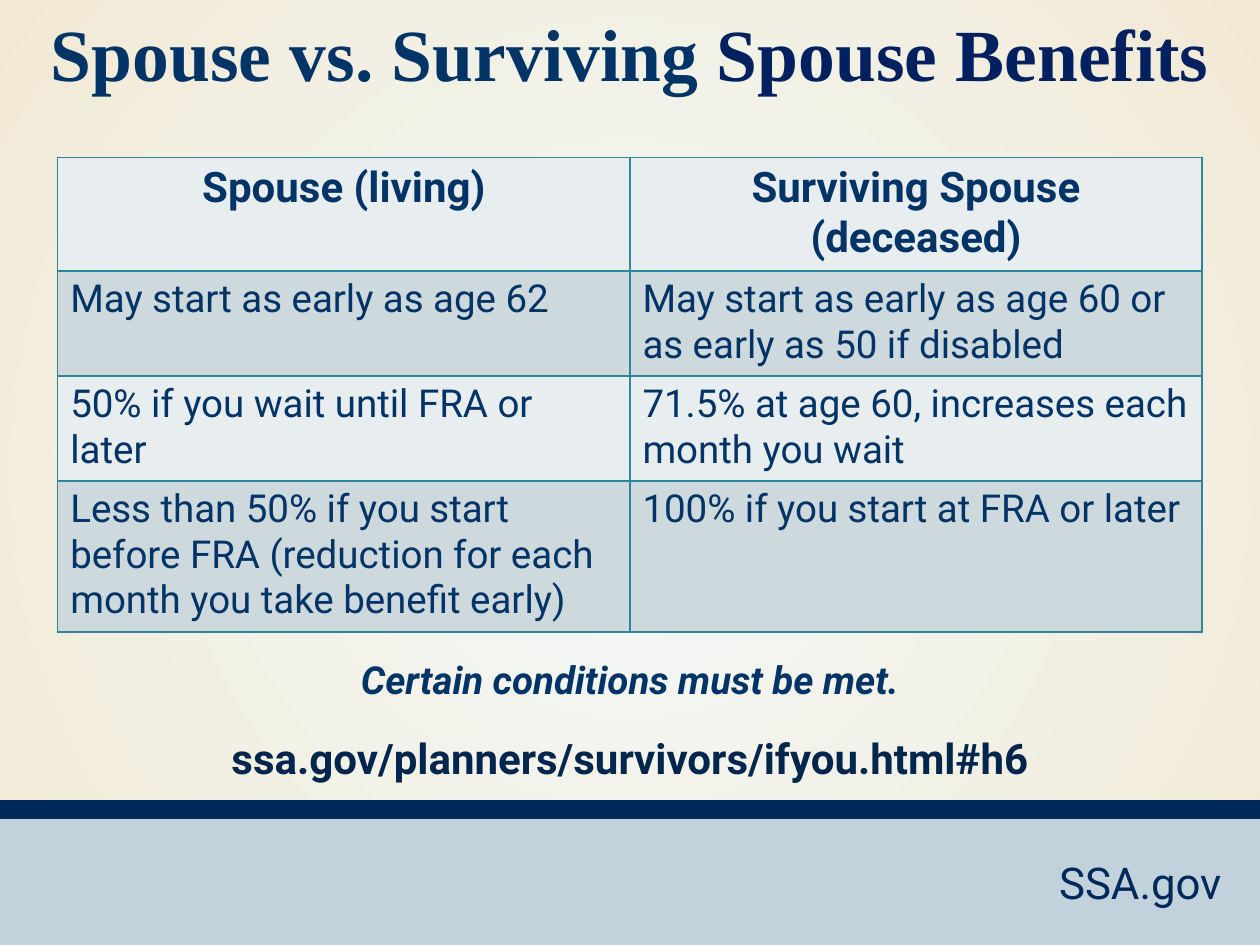
from lxml.etree import SubElement
from pptx import Presentation
from pptx.dml.color import RGBColor
from pptx.enum.shapes import MSO_SHAPE
from pptx.enum.text import MSO_ANCHOR, PP_ALIGN
from pptx.oxml.ns import qn
from pptx.util import Pt

HUES = {
    "glow": "F3FAFB", "sand": "F2E9D5", "band": "C1D2DC", "navy": "00295B",
    "link": "00264D", "ink": "003366", "deep": "002060", "edge": "31859B",
    "light": "E8EDEF", "dark": "CED9DE",
}
ROWS = [
    (64.6, "Spouse (living)", "Surviving Spouse (deceased)"),
    (60, "May start as early as age 62",
     "May start as early as age 60 or as early as 50 if disabled"),
    (60, "50% if you wait until FRA or later",
     "71.5% at age 60, increases each month you wait"),
    (86.4, "Less than 50% if you start before FRA "
     "(reduction for each month you take benefit early)",
     "100% if you start at FRA or later"),
]


def color(name):
    return RGBColor.from_string(HUES[name])


def add_run(para, text, size, hue, face="Roboto", bold=False, italic=False):
    run = para.add_run()
    run.text = text
    font = run.font
    font.name, font.size, font.bold, font.italic = face, Pt(size), bold, italic
    font.color.rgb = color(hue)


def add_back(slide):
    fill = slide.background.fill
    fill.gradient()
    for stop, hue in zip(fill.gradient_stops, ("glow", "sand")):
        stop.color.rgb = color(hue)
    grad = next(slide.element.iter(qn("a:gradFill")))
    grad.remove(grad.find(qn("a:lin")))
    ring = SubElement(grad, qn("a:path"), path="circle")
    SubElement(ring, qn("a:fillToRect"),
               {side: "50000" for side in "ltrb"})


def add_bar(slide, top, height, hue):
    bar = slide.shapes.add_shape(
        MSO_SHAPE.RECTANGLE, 0, Pt(top), Pt(720), Pt(height))
    bar.shadow.inherit = False
    bar.fill.solid()
    bar.fill.fore_color.rgb = color(hue)
    bar.line.fill.background()


def add_text(slide, left, top, width, height, align=PP_ALIGN.CENTER):
    box = slide.shapes.add_textbox(Pt(left), Pt(top), Pt(width), Pt(height))
    frame = box.text_frame
    frame.word_wrap = True
    frame.vertical_anchor = MSO_ANCHOR.MIDDLE
    para = frame.paragraphs[0]
    para.alignment = align
    return para


def add_edges(cell):
    props = cell._tc.get_or_add_tcPr()
    for spot, side in enumerate("LRTB"):
        line = props.makeelement(qn(f"a:ln{side}"), {"w": str(Pt(1))})
        solid = SubElement(line, qn("a:solidFill"))
        SubElement(solid, qn("a:srgbClr"), val=HUES["edge"])
        props.insert(spot, line)


def add_grid(slide):
    total = sum(row[0] for row in ROWS)
    table = slide.shapes.add_table(
        len(ROWS), 2, Pt(33), Pt(90), Pt(654), Pt(total)).table
    for i, (height, *texts) in enumerate(ROWS):
        table.rows[i].height = Pt(height)
        head = i == 0
        for j, text in enumerate(texts):
            cell = table.cell(i, j)
            cell.fill.solid()
            cell.fill.fore_color.rgb = color("dark" if i % 2 else "light")
            add_edges(cell)
            para = cell.text_frame.paragraphs[0]
            para.alignment = PP_ALIGN.CENTER if head else PP_ALIGN.LEFT
            add_run(para, text, 24 if head else 22, "ink", bold=head)


def main():
    deck = Presentation()
    deck.slide_width, deck.slide_height = Pt(720), Pt(540)
    slide = deck.slides.add_slide(deck.slide_layouts[6])
    add_back(slide)
    add_bar(slide, 464, 76, "band")
    add_bar(slide, 457.2, 10.8, "navy")
    site = add_text(slide, 484, 485.3, 221, 37.4, PP_ALIGN.RIGHT)
    add_run(site, "SSA.gov", 25, "navy")
    link = add_text(slide, 0, 414.7, 720, 36)
    add_run(link, "ssa.gov/planners/survivors/ifyou.html#h6", 24, "link",
            bold=True)
    note = add_text(slide, 113, 371, 494, 34)
    add_run(note, "Certain conditions must be met.", 22, "ink",
            bold=True, italic=True)
    add_grid(slide)
    title = add_text(slide, 0, 0, 720, 59)
    for text, hue in (("Spouse vs. Surviving ", "ink"),
                      ("Spouse Benefits", "deep")):
        add_run(title, text, 42, hue, "Times New Roman", bold=True)
    deck.save("out.pptx")


if __name__ == "__main__":
    main()
